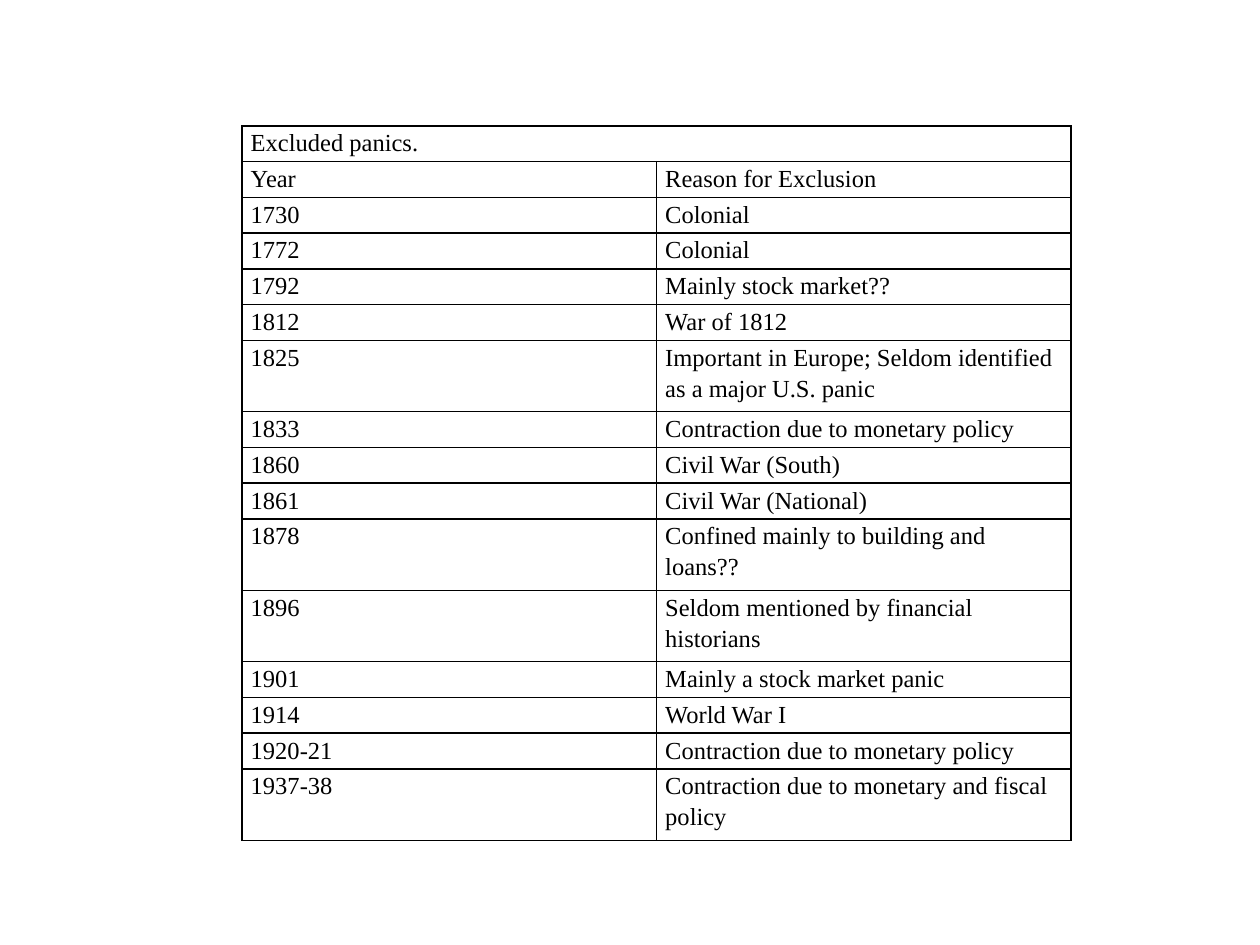
"""Build a slide with a table of excluded panics and the reasons for exclusion."""
from lxml.etree import SubElement
from pptx import Presentation
from pptx.dml.color import RGBColor
from pptx.oxml.ns import qn
from pptx.util import Inches, Pt

TITLE = "Excluded panics."
ROWS = [
    ("Year", "Reason for Exclusion"),
    ("1730", "Colonial"),
    ("1772", "Colonial"),
    ("1792", "Mainly stock market??"),
    ("1812", "War of 1812"),
    ("1825", "Important in Europe; Seldom identified as a major U.S. panic"),
    ("1833", "Contraction due to monetary policy"),
    ("1860", "Civil War (South)"),
    ("1861", "Civil War (National)"),
    ("1878", "Confined mainly to building and loans??"),
    ("1896", "Seldom mentioned by financial historians"),
    ("1901", "Mainly a stock market panic"),
    ("1914", "World War I"),
    ("1920-21", "Contraction due to monetary policy"),
    ("1937-38", "Contraction due to monetary and fiscal policy"),
]
COLORS = {"ink": "000000"}
FONT = "Times New Roman"
LEFT, TOP, WIDTH, HEIGHT = 1.92, 1, 6.58, 5.67
LINE_CAPACITY = 36


def add_borders(cell):
    properties = cell._tc.get_or_add_tcPr()
    for index, side in enumerate(("a:lnL", "a:lnR", "a:lnT", "a:lnB")):
        line = properties.makeelement(qn(side), {"w": str(Pt(1))})
        properties.insert(index, line)
        fill = SubElement(line, qn("a:solidFill"))
        SubElement(fill, qn("a:srgbClr"), val=COLORS["ink"])


def style_cell(cell):
    cell.fill.background()
    cell.margin_left = cell.margin_right = Inches(0.07)
    cell.margin_top = cell.margin_bottom = 0
    add_borders(cell)


def write_cell(cell, text):
    paragraph = cell.text_frame.paragraphs[0]
    paragraph.line_spacing = 1.15
    run = paragraph.add_run()
    run.text = text
    run.font.name = FONT
    run.font.size = Pt(14)
    run.font.color.rgb = RGBColor.from_string(COLORS["ink"])


def add_panic_table(slide):
    line_counts = [1] + [2 if len(reason) > LINE_CAPACITY else 1 for _, reason in ROWS]
    frame = slide.shapes.add_table(
        len(line_counts), 2, Inches(LEFT), Inches(TOP), Inches(WIDTH), Inches(HEIGHT)
    )
    table = frame.table
    table.first_row = table.horz_banding = False
    for column in table.columns:
        column.width = Inches(WIDTH / 2)
    for row, line_count in zip(table.rows, line_counts):
        row.height = Inches(HEIGHT * line_count / sum(line_counts))
    for cell in table.iter_cells():
        style_cell(cell)

    table.cell(0, 0).merge(table.cell(0, 1))
    write_cell(table.cell(0, 0), TITLE)
    for row_index, values in enumerate(ROWS, start=1):
        for column_index, text in enumerate(values):
            write_cell(table.cell(row_index, column_index), text)


def main():
    presentation = Presentation()
    presentation.slide_width = Inches(10)
    presentation.slide_height = Inches(7.5)
    slide = presentation.slides.add_slide(presentation.slide_layouts[6])
    add_panic_table(slide)
    presentation.save("out.pptx")


if __name__ == "__main__":
    main()
